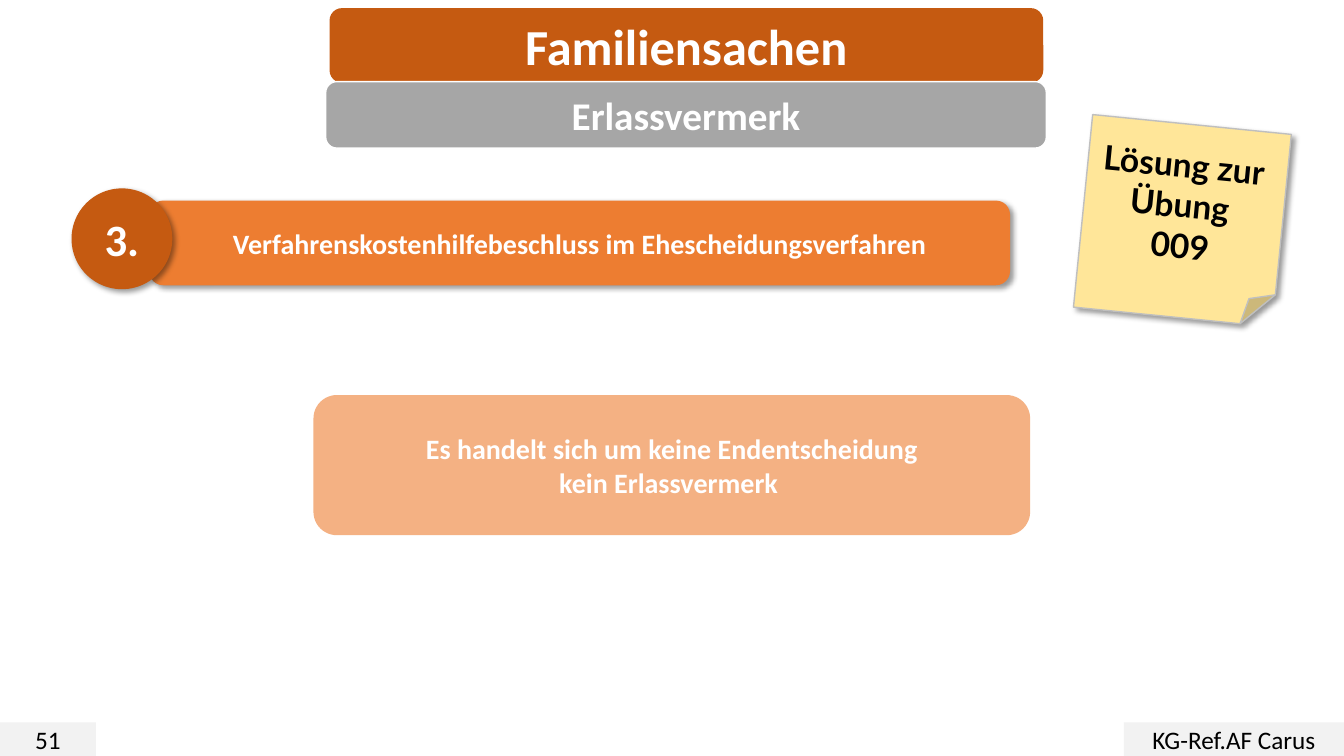
"""Build the slide on the Erlassvermerk in family matters, solution to exercise 009."""
from dataclasses import dataclass

from lxml.etree import SubElement
from pptx import Presentation
from pptx.dml.color import RGBColor
from pptx.enum.shapes import MSO_SHAPE
from pptx.enum.text import MSO_ANCHOR, PP_ALIGN
from pptx.oxml.ns import qn
from pptx.util import Pt


@dataclass(frozen=True)
class Theme:
    font: str = "Calibri"
    note_font: str = "Lato"
    white: str = "FFFFFF"
    black: str = "000000"
    dark_orange: str = "C55A11"
    orange: str = "ED7D31"
    light_orange: str = "F4B183"
    gray: str = "A6A6A6"
    footer_gray: str = "F2F2F2"
    note_yellow: str = "FFE699"
    note_edge: str = "BFBFBF"
    title_size: int = 36
    number_size: int = 32
    subtitle_size: int = 28
    note_size: int = 24
    body_size: int = 20
    footer_size: int = 18


theme = Theme()
presentation = Presentation()
presentation.slide_width, presentation.slide_height = Pt(960), Pt(540)
slide = presentation.slides.add_slide(presentation.slide_layouts[6])


def add_box(kind, bounds, fill, text, size, color=theme.white, bold=True, font=theme.font, edge=None):
    shape = slide.shapes.add_shape(kind, *[Pt(length) for length in bounds])
    shape.shadow.inherit = False
    shape.fill.solid()
    shape.fill.fore_color.rgb = RGBColor.from_string(fill)
    if edge:
        shape.line.color.rgb = RGBColor.from_string(edge)
        shape.line.width = Pt(1)
    else:
        shape.line.fill.background()
    frame = shape.text_frame
    frame.text = text
    frame.word_wrap = True
    frame.vertical_anchor = MSO_ANCHOR.MIDDLE
    frame.margin_top = frame.margin_bottom = Pt(0)
    for paragraph in frame.paragraphs:
        paragraph.alignment = PP_ALIGN.CENTER
        for run in paragraph.runs:
            run.font.name = font
            run.font.size = Pt(size)
            run.font.bold = bold
            run.font.color.rgb = RGBColor.from_string(color)
    return shape


def add_shadow(shape):
    effects = shape._element.spPr.find(qn("a:effectLst"))
    shadow = SubElement(effects, qn("a:outerShdw"), blurRad=str(Pt(4)), dist=str(Pt(3)),
                        dir="2700000", algn="tl", rotWithShape="0")
    color = SubElement(shadow, qn("a:srgbClr"), val=theme.black)
    SubElement(color, qn("a:alpha"), val="40000")


add_box(MSO_SHAPE.ROUNDED_RECTANGLE, (235.4, 5.8, 509.8, 53.3), theme.dark_orange,
        "Familiensachen", theme.title_size)

for left, width, text in [(0, 68.6, "51"), (802.8, 157.2, "KG-Ref.AF Carus")]:
    add_box(MSO_SHAPE.RECTANGLE, (left, 516, width, 24), theme.footer_gray,
            text, theme.footer_size, theme.black, bold=False)

add_box(MSO_SHAPE.ROUNDED_RECTANGLE, (232.6, 58.3, 514.8, 47.5), theme.gray,
        "Erlassvermerk", theme.subtitle_size, edge=theme.white)

note = add_box(MSO_SHAPE.FOLDED_CORNER, (773.3, 88.6, 142.6, 138.2), theme.note_yellow,
               "Lösung zur \nÜbung \n009", theme.note_size, theme.black,
               font=theme.note_font, edge=theme.note_edge)
note.rotation = 5.7

topic = add_box(MSO_SHAPE.ROUNDED_RECTANGLE, (106.6, 143.3, 614.9, 60.5), theme.orange,
                "Verfahrenskostenhilfebeschluss im Ehescheidungsverfahren", theme.body_size)
number = add_box(MSO_SHAPE.OVAL, (51.1, 134.6, 72, 72), theme.dark_orange,
                 "3.", theme.number_size)

for raised_shape in (note, topic, number):
    add_shadow(raised_shape)

add_box(MSO_SHAPE.ROUNDED_RECTANGLE, (223.9, 282.2, 511.9, 100.1), theme.light_orange,
        "Es handelt sich um keine Endentscheidung\nkein Erlassvermerk ", theme.body_size)

presentation.save("out.pptx")
